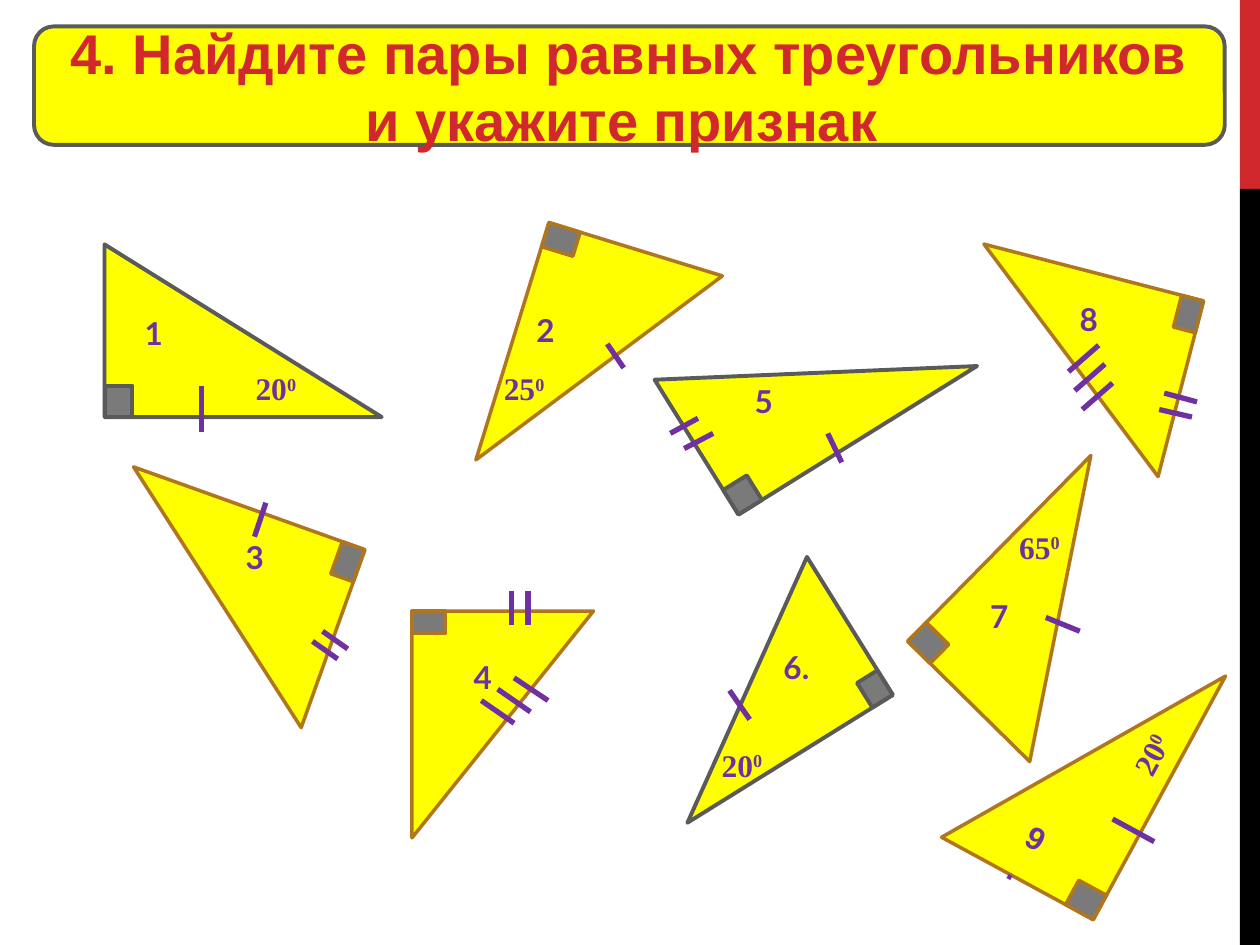
import math

import pptx
import pptx.dml.color
import pptx.enum.shapes
import pptx.enum.text
import pptx.oxml.ns
import pptx.util
from lxml import etree
from pptx.util import Inches

COLORS = {
    "red": "D1282E", "black": "000000", "yellow": "FFFF00", "gray": "5A5A5A",
    "corner": "7A7A7A", "brown": "B0761F", "purple": "7030A0",
}
LINE_WIDTHS = {"gray": 2.25, "brown": 2}
SHAPES = pptx.enum.shapes.MSO_SHAPE


def add_filled(parent, kind, box, fill, line=None):
    shape = parent.add_shape(kind, *map(Inches, box))
    shape.shadow.inherit = False
    shape.fill.solid()
    shape.fill.fore_color.rgb = pptx.dml.color.RGBColor.from_string(COLORS[fill])
    if line:
        shape.line.color.rgb = pptx.dml.color.RGBColor.from_string(COLORS[line])
        shape.line.width = pptx.util.Pt(LINE_WIDTHS[line])
    else:
        shape.line.fill.background()
    return shape


def add_run(paragraph, text, font, size, color):
    run = paragraph.add_run()
    run.text = text
    run.font.name = font
    run.font.size = pptx.util.Pt(size)
    run.font.bold = True
    run.font.color.rgb = pptx.dml.color.RGBColor.from_string(COLORS[color])
    return run


# box: left, top, width, height; corner: size of the right-angle mark;
# number: text, left, top, width; angle: degrees, left, top, width;
# ticks: x1, y1, x2, y2
triangles = [
    dict(box=(0.83, 1.94, 2.2, 1.37), rotation=0, line="gray", corner=(0.22, 0.25),
         number=("1", 1.05, 2.44, 0.33), angle=("20", 1.93, 2.88, 0.77),
         ticks=[(1.6, 3.06, 1.6, 3.43)]),
    dict(box=(0.75, 3.99, 1.95, 1.5), rotation=199.7, line="brown", corner=(0.19, 0.27),
         number=("3", 1.85, 4.22, 0.39),
         ticks=[(2.11, 3.99, 2.02, 4.26), (2.48, 5.09, 2.68, 5.23),
                (2.56, 5.01, 2.76, 5.15)]),
    dict(box=(4.97, 4.83, 1.92, 1.29), rotation=328.1, flip="flipH", line="gray",
         corner=(0.19, 0.23), number=("6.", 6.12, 5.09, 0.56),
         angle=("20", 5.63, 5.87, 0.54), ticks=[(5.79, 5.48, 5.95, 5.71)]),
    dict(box=(5.36, 2.33, 2.23, 1.26), rotation=328.1, line="gray", corner=(0.22, 0.23),
         number=("5", 5.89, 2.98, 0.57),
         ticks=[(5.32, 3.44, 5.54, 3.32), (5.43, 3.56, 5.66, 3.44),
                (6.57, 3.44, 6.68, 3.67)]),
    dict(box=(3.77, 2.2, 1.97, 1.44), rotation=107.1, line="brown", corner=(0.2, 0.26),
         number=("2", 4.16, 2.42, 0.53), angle=("25", 3.9, 2.88, 0.54),
         ticks=[(4.82, 2.73, 4.95, 2.92)]),
    dict(box=(7.38, 4.15, 2.07, 1.36), rotation=314.6, flip="flipV", line="brown",
         corner=(0.21, 0.25), number=("7", 7.76, 4.69, 0.54),
         angle=("65", 7.99, 4.14, 0.87), ticks=[(8.3, 4.9, 8.57, 5.01)]),
    dict(box=(3.09, 5.03, 1.8, 1.44), rotation=90, line="brown", corner=(0.18, 0.26),
         number=("4", 3.66, 5.17, 0.31),
         ticks=[(3.95, 5.47, 4.21, 5.65), (3.82, 5.56, 4.08, 5.74),
                (4.08, 5.38, 4.35, 5.56), (4.06, 4.69, 4.06, 4.96),
                (4.19, 4.69, 4.19, 4.96)]),
    dict(box=(7.6, 2.14, 1.8, 1.44), rotation=194.5, line="brown", corner=(0.18, 0.26),
         number=("8", 8.47, 2.33, 0.55),
         ticks=[(8.77, 2.89, 8.53, 3.1), (8.72, 2.74, 8.48, 2.95),
                (8.83, 3.04, 8.59, 3.25), (9.5, 3.19, 9.24, 3.12),
                (9.46, 3.31, 9.2, 3.25)]),
    dict(box=(7.5, 5.32, 2.2, 1.37), rotation=298.5, line="brown", corner=(0.22, 0.25),
         number=("9.", 7.98, 6.51, 0.5), angle=("20", 8.81, 5.68, 0.77),
         turned_text=True, ticks=[(8.83, 6.5, 9.16, 6.68)]),
]

presentation = pptx.Presentation()
presentation.slide_width = Inches(10)
presentation.slide_height = Inches(7.5)
slide = presentation.slides.add_slide(presentation.slide_layouts[6])

add_filled(slide.shapes, SHAPES.RECTANGLE, (9.84, 0, 0.16, 1.5), "red")
add_filled(slide.shapes, SHAPES.RECTANGLE, (9.84, 1.5, 0.16, 6), "black")

title = add_filled(slide.shapes, SHAPES.ROUNDED_RECTANGLE, (0.27, 0.21, 9.45, 0.94),
                   "yellow", "gray")
title.text_frame.word_wrap = True
title.text_frame.vertical_anchor = pptx.enum.text.MSO_ANCHOR.MIDDLE
paragraph = title.text_frame.paragraphs[0]
paragraph.alignment = pptx.enum.text.PP_ALIGN.CENTER
add_run(paragraph, "4. Найдите пары равных треугольников и укажите признак ",
        "Arial", 32, "red")

for triangle in triangles:
    group = slide.shapes.add_group_shape().shapes
    left, top, width, height = triangle["box"]
    corner_width, corner_height = triangle["corner"]
    flip = triangle.get("flip")

    # The right angle sits at the lower left before flipping and rotating.
    offset_x = (corner_width - width) / 2 * (-1 if flip == "flipH" else 1)
    offset_y = (height - corner_height) / 2 * (-1 if flip == "flipV" else 1)
    turn = math.radians(triangle["rotation"])
    center_x = left + width / 2 + offset_x * math.cos(turn) - offset_y * math.sin(turn)
    center_y = top + height / 2 + offset_x * math.sin(turn) + offset_y * math.cos(turn)
    corner_box = (center_x - corner_width / 2, center_y - corner_height / 2,
                  corner_width, corner_height)

    for kind, box, fill in ((SHAPES.RIGHT_TRIANGLE, triangle["box"], "yellow"),
                            (SHAPES.RECTANGLE, corner_box, "corner")):
        shape = add_filled(group, kind, box, fill, triangle["line"])
        shape.rotation = triangle["rotation"]
        if flip:
            shape._element.spPr.find(pptx.oxml.ns.qn("a:xfrm")).set(flip, "1")

    for part in ("number", "angle"):
        if part not in triangle:
            continue
        text, left, top, width = triangle[part]
        label = group.add_textbox(*map(Inches, (left, top, width, 0.4)))
        label.text_frame.word_wrap = part == "number" or width > 0.6
        paragraph = label.text_frame.paragraphs[0]
        turned = triangle.get("turned_text", False)
        if turned:
            label.rotation = triangle["rotation"]
        if part == "angle":
            add_run(paragraph, text, "Times New Roman", 18, "purple")
            degree = add_run(paragraph, "0", "Times New Roman", 18, "purple")
            degree._r.get_or_add_rPr().set("baseline", "30000")
        else:
            add_run(paragraph, text, "Arial" if turned else "Lato", 18, "purple")
            if turned:
                label.text_frame._txBody.bodyPr.set("vert", "eaVert")

    for tick in triangle["ticks"]:
        connector = group.add_connector(pptx.enum.shapes.MSO_CONNECTOR.STRAIGHT,
                                        *map(Inches, tick))
        connector.line.color.rgb = pptx.dml.color.RGBColor.from_string(COLORS["purple"])
        connector.line.width = pptx.util.Pt(3)
        etree.SubElement(connector._element.spPr, pptx.oxml.ns.qn("a:effectLst"))

presentation.save("out.pptx")
